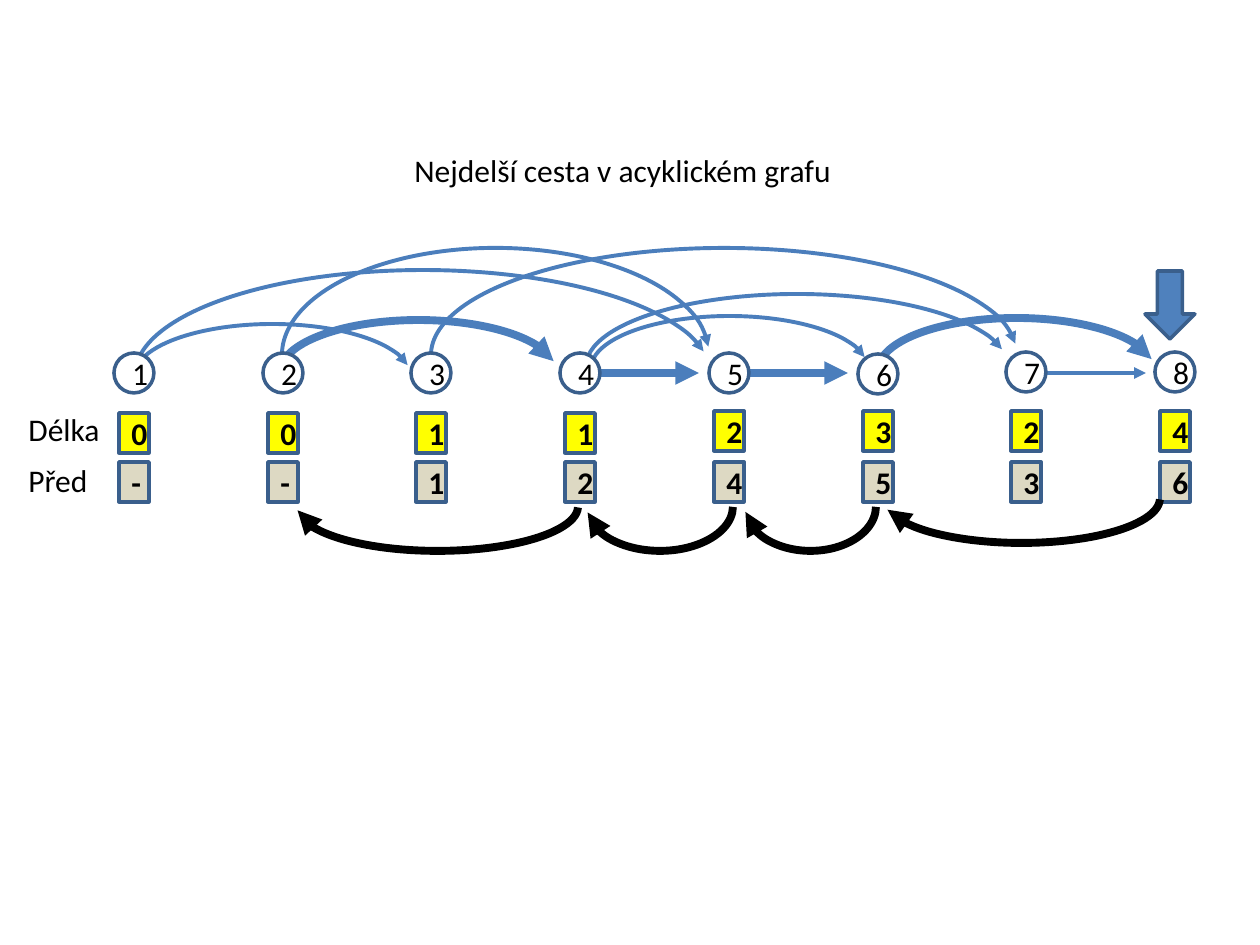
from lxml.etree import SubElement
from pptx import Presentation
from pptx.dml.color import RGBColor
from pptx.enum.shapes import MSO_CONNECTOR, MSO_SHAPE as SHAPE
from pptx.enum.text import MSO_ANCHOR, MSO_AUTO_SIZE, PP_ALIGN
from pptx.oxml.ns import qn
from pptx.util import Emu, Pt

SCALE = 914400 / 126
EDGE, BORDER, BLACK = "4B7EBC", "3A5F8C", "000000"
THIN, THICK = 2.25, 4.5

NODES = [  # number, length, predecessor
    ("1", "0", "-"), ("2", "0", "-"), ("3", "1", "1"), ("4", "1", "2"),
    ("5", "2", "4"), ("6", "3", "5"), ("7", "2", "3"), ("8", "4", "6"),
]
NODE_TOPS = [353, 353, 353, 353, 353, 354, 352, 352]
LENGTH_TOPS = [413] * 4 + [411] * 4
PRED_TOP = 462

# box of the ellipse, line width, end angle
EDGE_ARCS = [
    ((134, 324, 277, 105), THIN, 213.113),
    ((135, 270, 576, 210), THIN, 213.113),
    ((282, 248, 427, 214), THIN, 214.654),
    ((878, 318, 277, 105), THICK, 213.113),
    ((591, 316, 277, 105), THIN, 213.113),
    ((431, 248, 586, 214), THIN, 214.654),
    ((586, 294, 422, 145), THIN, 213.113),
    ((280, 320, 277, 105), THICK, 213.113),
]
BACK_ARCS = [
    ((883, 454, 277, 89), THICK, 213.113),
    ((745, 462, 131, 89), THICK, 213.113),
    ((587, 462, 146, 89), THICK, 213.113),
    ((297, 462, 281, 89), THICK, 215.038),
]
STRAIGHT_EDGES = [(600, 699, THICK), (748, 848, THICK), (1047, 1146, THIN)]


def px(n):
    return Emu(round(n * SCALE))


def color(hex_text):
    return RGBColor.from_string(hex_text)


def set_line(sp, hex_text, width, arrow=False):
    sp.line.color.rgb = color(hex_text)
    sp.line.width = Pt(width)
    if arrow:
        SubElement(sp.line._get_or_add_ln(), qn("a:tailEnd"), type="triangle")


def write(tf, text, bold=False):
    r = tf.paragraphs[0].add_run()
    r.text = text
    style = {"name": "Calibri", "size": Pt(18), "bold": bold}
    for key, value in style.items():
        setattr(r.font, key, value)
    r.font.color.rgb = color(BLACK)


def add_shape(s, kind, box, fill, text=None, bold=False):
    sp = s.shapes.add_shape(kind, *map(px, box))
    sp.shadow.inherit = False
    sp.fill.solid()
    sp.fill.fore_color.rgb = color(fill)
    set_line(sp, BORDER, 2)
    if text:
        tf = sp.text_frame
        tf.vertical_anchor = MSO_ANCHOR.MIDDLE
        tf.paragraphs[0].alignment = PP_ALIGN.CENTER
        write(tf, text, bold)


def add_arc(s, box, width, end, hex_text=EDGE, flipped=False):
    sp = s.shapes.add_shape(SHAPE.ARC, *map(px, box))
    sp.shadow.inherit = False
    sp.fill.background()
    sp.adjustments[0], sp.adjustments[1] = 108.25, end
    set_line(sp, hex_text, width, arrow=True)
    if flipped:
        for key in ("flipH", "flipV"):
            sp._element.spPr.xfrm.set(key, "1")


def add_straight_edge(s, x1, x2, y, width):
    line = s.shapes.add_connector(MSO_CONNECTOR.STRAIGHT, px(x1), px(y), px(x2), px(y))
    set_line(line, EDGE, width, arrow=True)
    SubElement(line._element.spPr, qn("a:effectLst"))


def add_label(s, box, text):
    tf = s.shapes.add_textbox(*map(px, box)).text_frame
    tf.word_wrap = False
    tf.auto_size = MSO_AUTO_SIZE.SHAPE_TO_FIT_TEXT
    write(tf, text)


def add_edges(s):
    for arc in EDGE_ARCS:
        add_arc(s, *arc)
    for x1, x2, width in STRAIGHT_EDGES:
        add_straight_edge(s, x1, x2, 373, width)


def add_columns(s, first, last):
    """Spread the nodes with their two values between two centre lines."""
    for i, (number, length, pred) in enumerate(NODES):
        x = round(first + i * (last - first) / (len(NODES) - 1))
        add_shape(s, SHAPE.OVAL, (x - 20, NODE_TOPS[i], 40, 40), "FFFFFF", number)
        add_shape(s, SHAPE.RECTANGLE, (x - 15, LENGTH_TOPS[i], 30, 40), "FFFF00", length, True)
        add_shape(s, SHAPE.RECTANGLE, (x - 15, PRED_TOP, 30, 40), "DDD9C3", pred, True)


def main():
    prs = Presentation()
    prs.slide_width, prs.slide_height = px(1260), px(945)
    s = prs.slides.add_slide(prs.slide_layouts[6])
    add_edges(s)
    add_columns(s, 134, 1175)
    add_shape(s, SHAPE.DOWN_ARROW, (1145, 271, 50, 68), "4F81BD")
    add_label(s, (402, 145, 446, 51), "Nejdelší cesta v acyklickém grafu")
    add_label(s, (16, 404, 97, 51), "Délka")
    add_label(s, (16, 455, 86, 51), "Před")
    for arc in BACK_ARCS:
        add_arc(s, *arc, hex_text=BLACK, flipped=True)
    prs.save("out.pptx")


if __name__ == "__main__":
    main()
